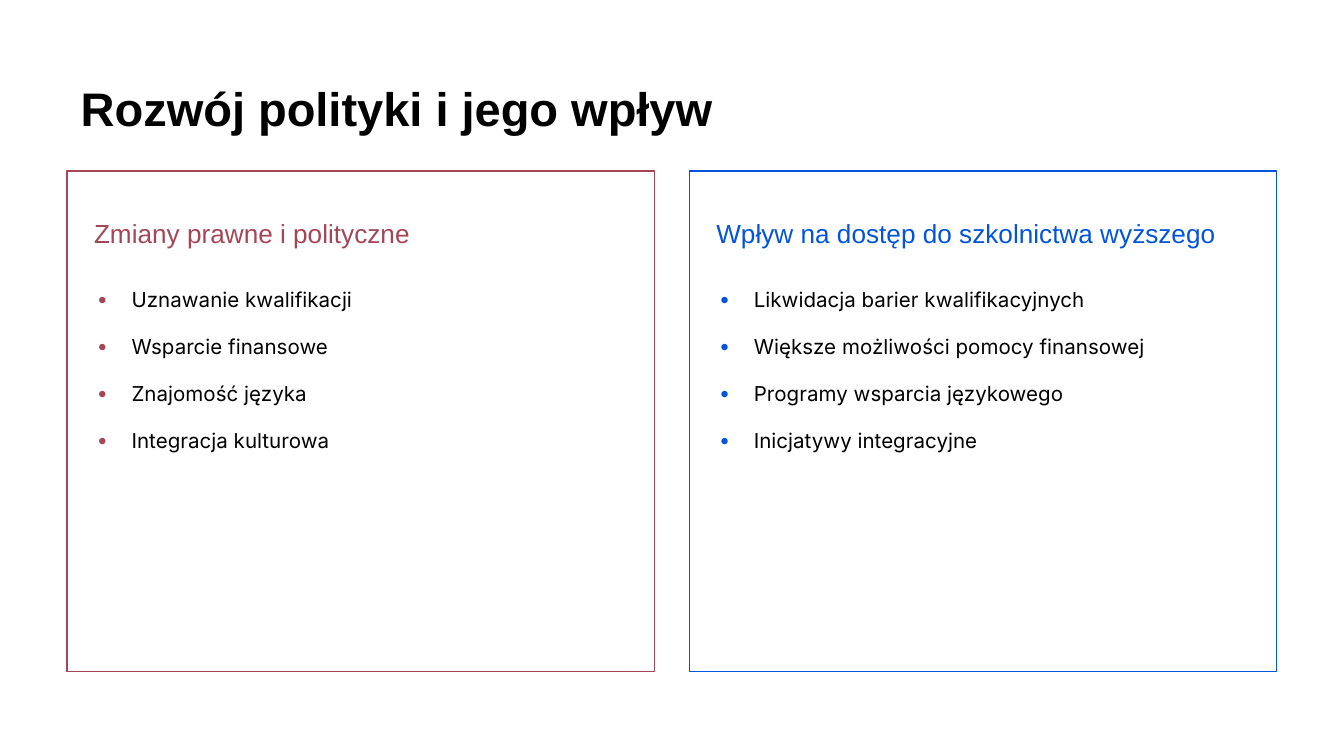
import pptx
import pptx.dml.color
import pptx.enum.shapes
import pptx.enum.text
import pptx.oxml.ns
import pptx.util
from lxml import etree

Pt = pptx.util.Pt
RGBColor = pptx.dml.color.RGBColor
Anchor = pptx.enum.text.MSO_ANCHOR
Align = pptx.enum.text.PP_ALIGN
qn = pptx.oxml.ns.qn

BLACK = RGBColor(0x00, 0x00, 0x00)
WHITE = RGBColor(0xFF, 0xFF, 0xFF)
RED = RGBColor(0xA5, 0x46, 0x57)
BLUE = RGBColor(0x02, 0x54, 0xDB)

PAGE_WIDTH, PAGE_HEIGHT = 720, 405
MARGIN, GAP = 36, 18.7
PANEL_TOP, PANEL_HEIGHT = 91.7, 268
PANEL_WIDTH = (PAGE_WIDTH - 2 * MARGIN - GAP) / 2
HEADING_HEIGHT, LIST_OFFSET = 49, 53
INSET = 7.2

PANELS = [
    ("Zmiany prawne i polityczne", RED,
     ["Uznawanie kwalifikacji", "Wsparcie finansowe",
      "Znajomość języka", "Integracja kulturowa"]),
    ("Wpływ na dostęp do szkolnictwa wyższego", BLUE,
     ["Likwidacja barier kwalifikacyjnych", "Większe możliwości pomocy finansowej",
      "Programy wsparcia językowego", "Inicjatywy integracyjne"]),
]


def set_frame(frame, anchor, left=INSET, right=INSET):
    """Wrap a text frame and set its anchor and insets."""
    frame.word_wrap = True
    frame.auto_size = pptx.enum.text.MSO_AUTO_SIZE.NONE
    frame.vertical_anchor = anchor
    frame.margin_left, frame.margin_right = Pt(left), Pt(right)
    frame.margin_top = frame.margin_bottom = Pt(INSET)


def write(para, text, name, size, color, bold=False):
    """Fill a paragraph with left-aligned text in one font."""
    para.text = text
    para.alignment = Align.LEFT
    para.font.name, para.font.size, para.font.bold = name, Pt(size), bold
    para.font.color.rgb = color


def add_bullet(para, color):
    """Give a paragraph a hanging coloured bullet."""
    properties = para._p.get_or_add_pPr()
    properties.set("marL", str(Pt(27.4)))
    properties.set("indent", str(-Pt(18.7)))
    bullet_color = etree.SubElement(properties, qn("a:buClr"))
    etree.SubElement(bullet_color, qn("a:srgbClr"), val=str(color))
    etree.SubElement(properties, qn("a:buFont"), typeface="Inter")
    etree.SubElement(properties, qn("a:buChar"), char="•")


def add_title(page, text, left, top, width, height):
    """Place and format the title placeholder."""
    title = page.shapes.title
    title.left, title.top, title.width, title.height = map(Pt, (left, top, width, height))
    set_frame(title.text_frame, Anchor.MIDDLE)
    write(title.text_frame.paragraphs[0], text, "Arial", 25.2, BLACK, bold=True)


def add_panel(page, heading, color, items, left, top, width, height):
    """Draw an outlined panel with a heading and a bulleted list."""
    panel = page.shapes.add_shape(pptx.enum.shapes.MSO_SHAPE.RECTANGLE,
                                  *map(Pt, (left, top, width, height)))
    panel.shadow.inherit = False
    panel.fill.solid()
    panel.fill.fore_color.rgb = WHITE
    fill_color = panel._element.spPr.find(qn("a:solidFill")).find(qn("a:srgbClr"))
    etree.SubElement(fill_color, qn("a:alpha"), val="20000")
    panel.line.color.rgb = color
    panel.line.width = Pt(0.75)

    list_box = page.shapes.add_textbox(
        *map(Pt, (left, top + LIST_OFFSET, width, height - LIST_OFFSET)))
    frame = list_box.text_frame
    set_frame(frame, Anchor.TOP)
    for index, item in enumerate(items):
        para = frame.add_paragraph() if index else frame.paragraphs[0]
        para.line_spacing = 1.15
        para.space_before = Pt(10 if index else 0)
        add_bullet(para, color)
        write(para, item, "Inter", 11, BLACK)

    heading_box = page.shapes.add_textbox(*map(Pt, (left, top, width, HEADING_HEIGHT)))
    set_frame(heading_box.text_frame, Anchor.BOTTOM, left=14.4, right=10.8)
    write(heading_box.text_frame.paragraphs[0], heading, "Arial", 14, color)


def main():
    """Build the slide and save the deck."""
    deck = pptx.Presentation()
    deck.slide_width, deck.slide_height = Pt(PAGE_WIDTH), Pt(PAGE_HEIGHT)
    page = deck.slides.add_slide(deck.slide_layouts[5])
    add_title(page, "Rozwój polityki i jego wpływ", MARGIN, 35.4, PAGE_WIDTH - 2 * MARGIN, 45)
    for column, (heading, color, items) in enumerate(PANELS):
        left = MARGIN + column * (PANEL_WIDTH + GAP)
        add_panel(page, heading, color, items, left, PANEL_TOP, PANEL_WIDTH, PANEL_HEIGHT)
    deck.save("out.pptx")


if __name__ == "__main__":
    main()
